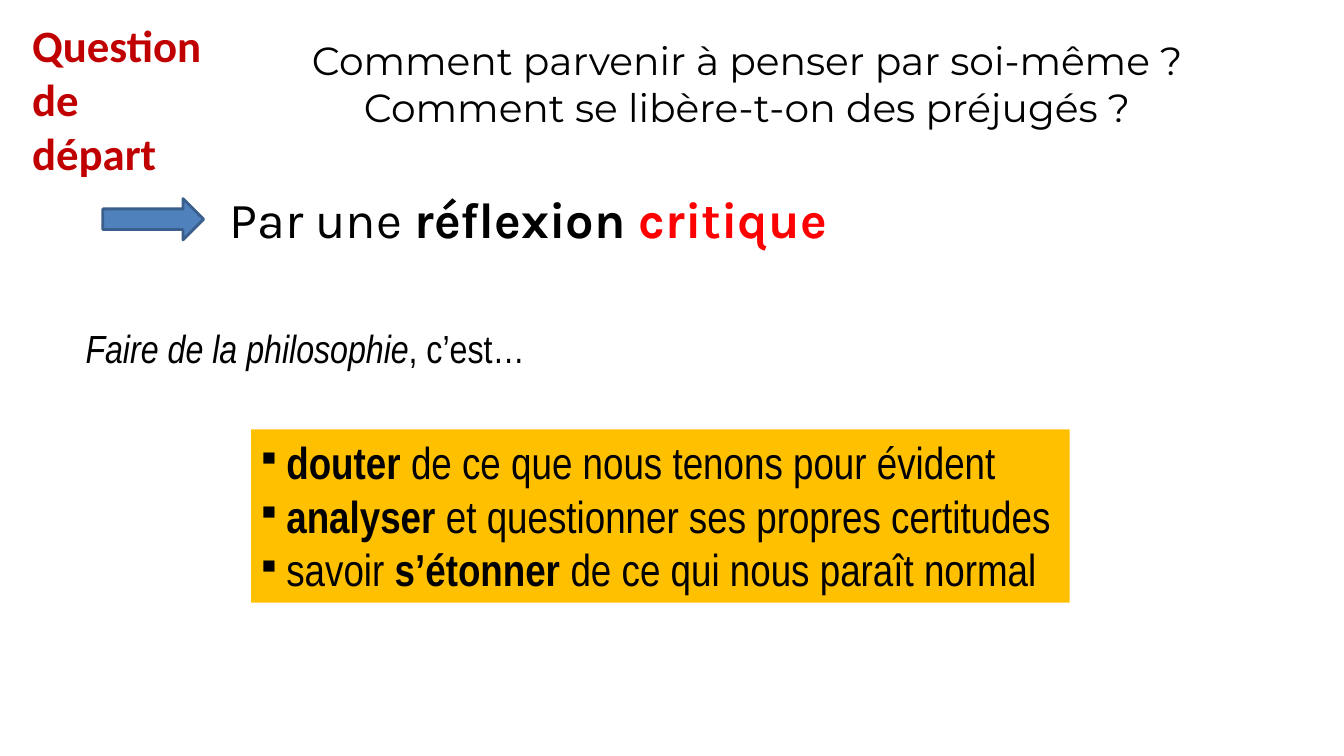
from dataclasses import dataclass

from lxml.etree import SubElement
from pptx import Presentation
from pptx.dml.color import RGBColor
from pptx.enum.shapes import MSO_SHAPE
from pptx.enum.text import MSO_ANCHOR, MSO_AUTO_SIZE, PP_ALIGN
from pptx.oxml.ns import qn
from pptx.util import Inches, Pt


@dataclass(frozen=True)
class Theme:
    black: str = "000000"
    dark: str = "C00000"
    red: str = "FF0000"
    gold: str = "FFC000"
    blue: str = "4F81BD"
    edge: str = "3A5F8C"
    head: str = "Montserrat"
    label: str = "Calibri"
    claim: str = "Karla"
    body: str = "Arial Narrow"
    small: int = 28
    mid: int = 32
    large: int = 36


class Board:
    def __init__(self, theme, slide):
        self.theme = theme
        self.slide = slide

    def place(self, shape, box):
        shape.left, shape.top, shape.width, shape.height = map(Inches, box)

    def fill_text(self, shape, lines, font, size, color=None, align=PP_ALIGN.LEFT):
        frame = shape.text_frame
        frame.word_wrap = True
        frame.auto_size = MSO_AUTO_SIZE.NONE
        frame.vertical_anchor = MSO_ANCHOR.TOP
        frame.text = "\n".join([""] * len(lines))
        for para, parts in zip(frame.paragraphs, lines):
            para.alignment = align
            para.space_before = Pt(0)
            for text, style in parts:
                run = para.add_run()
                run.text = text
                run.font.name = font
                run.font.size = Pt(size)
                run.font.bold = style.get("bold", False)
                run.font.italic = style.get("italic", False)
                tint = style.get("color", color or self.theme.black)
                run.font.color.rgb = RGBColor.from_string(tint)

    def title(self, box, text):
        shape = self.slide.shapes.title
        self.place(shape, box)
        self.fill_text(shape, [[(text, {})]], self.theme.head, self.theme.small,
                       align=PP_ALIGN.CENTER)

    def text(self, box, lines, font, size, color=None):
        shape = self.slide.shapes.add_textbox(*map(Inches, box))
        self.fill_text(shape, lines, font, size, color)

    def bullets(self, box, lines):
        shape = self.slide.placeholders[1]
        self.place(shape, box)
        self.paint(shape, self.theme.gold)
        self.fill_text(shape, lines, self.theme.body, self.theme.mid)
        for para in shape.text_frame.paragraphs:
            props = para._p.get_or_add_pPr()
            props.set("marL", str(Inches(0.25)))
            props.set("indent", str(-Inches(0.25)))
            SubElement(props, qn("a:buFont")).set("typeface", self.theme.body)
            SubElement(props, qn("a:buChar")).set("char", "▪")

    def paint(self, shape, color):
        shape.fill.solid()
        shape.fill.fore_color.rgb = RGBColor.from_string(color)

    def arrow(self, box):
        shape = self.slide.shapes.add_shape(MSO_SHAPE.RIGHT_ARROW, *map(Inches, box))
        shape.shadow.inherit = False
        self.paint(shape, self.theme.blue)
        shape.line.color.rgb = RGBColor.from_string(self.theme.edge)
        shape.line.width = Pt(2)


def main():
    deck = Presentation()
    deck.slide_width, deck.slide_height = Inches(13.33), Inches(7.5)
    theme = Theme()
    board = Board(theme, deck.slides.add_slide(deck.slide_layouts[1]))
    bold = {"bold": True}

    board.title((2.18, 0.31, 10.46, 1.51),
                "Comment parvenir à penser par soi-même ? "
                "Comment se libère-t-on des préjugés ?")
    board.text((0.22, 0.13, 1.95, 1.52),
               [[("Question", bold)], [("de départ", bold)]],
               theme.label, theme.mid, theme.dark)
    board.text((2.18, 1.82, 10.16, 0.71),
               [[("Par une ", {}), ("réflexion ", bold),
                 ("critique", {"bold": True, "color": theme.red})]],
               theme.claim, theme.large)
    board.arrow((1.02, 1.97, 1, 0.41))
    board.text((0.75, 3.17, 11.78, 0.57),
               [[("Faire de la philosophie", {"italic": True}), (", c’est…", {})]],
               theme.body, theme.small)
    board.bullets((2.49, 4.26, 8.12, 1.72), [
        [("douter", bold), (" de ce que nous tenons pour évident", {})],
        [("analyser", bold), (" et questionner ses propres certitudes", {})],
        [("savoir ", {}), ("s’étonner", bold),
         (" de ce qui nous paraît normal", {})],
    ])
    deck.save("out.pptx")


if __name__ == "__main__":
    main()
